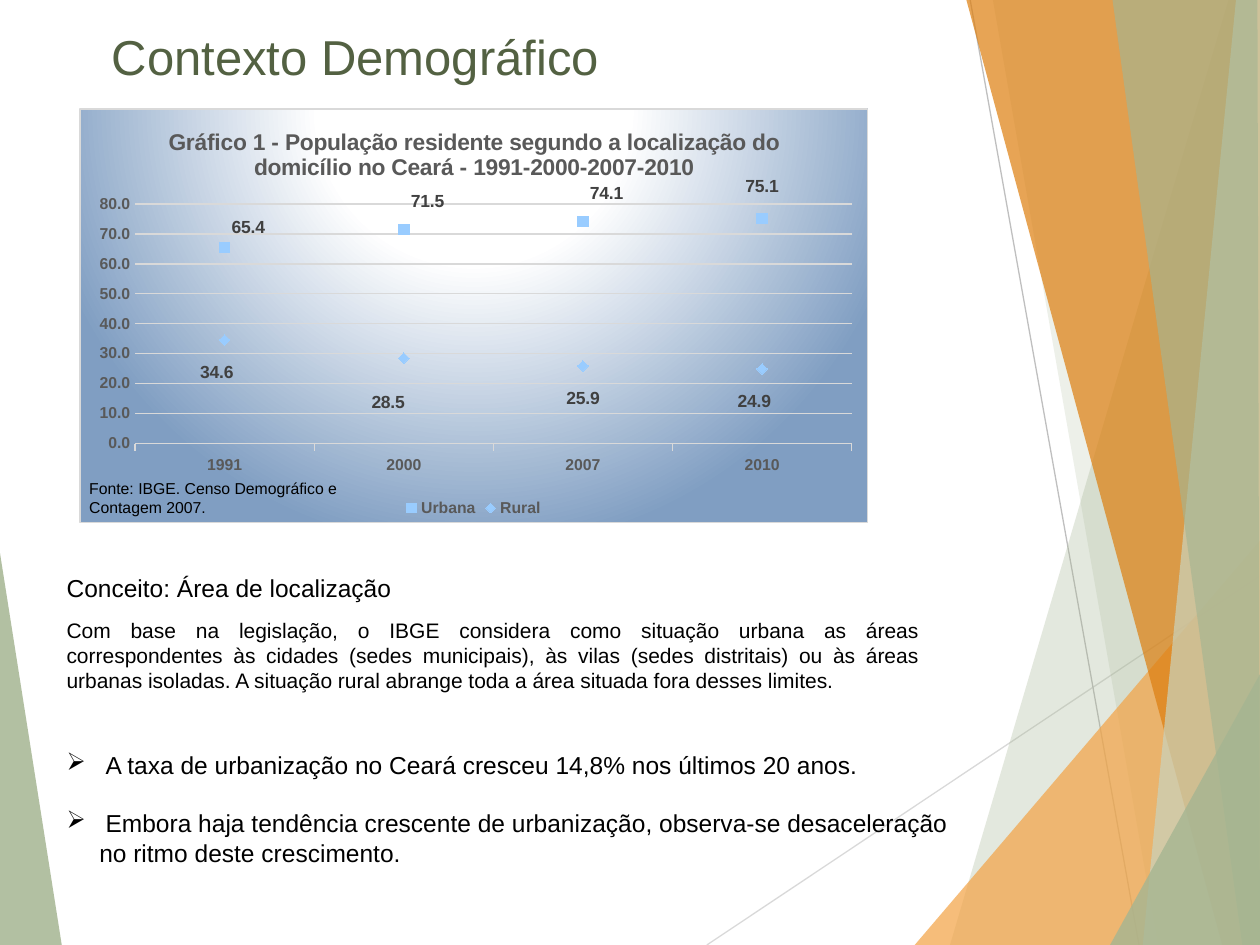
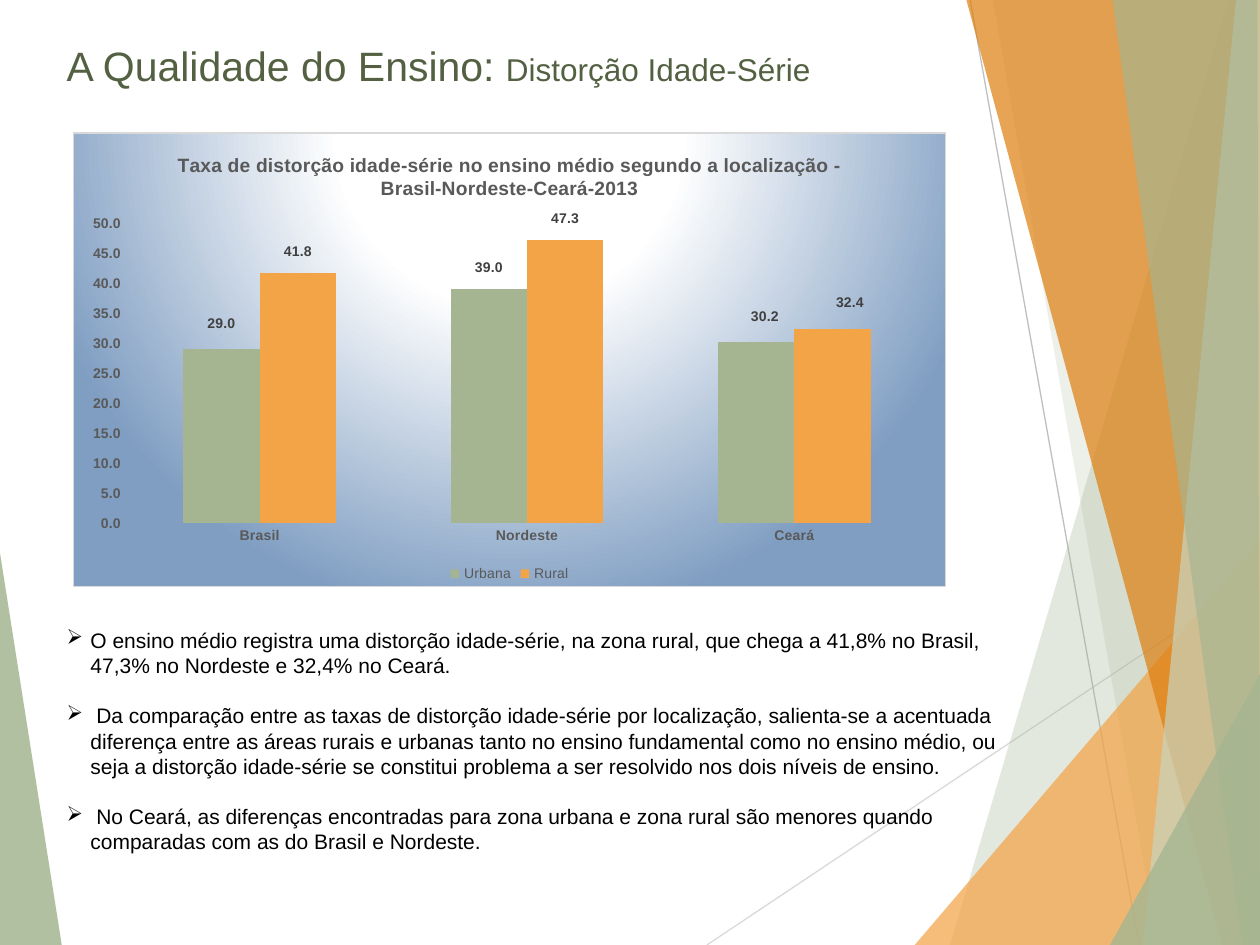
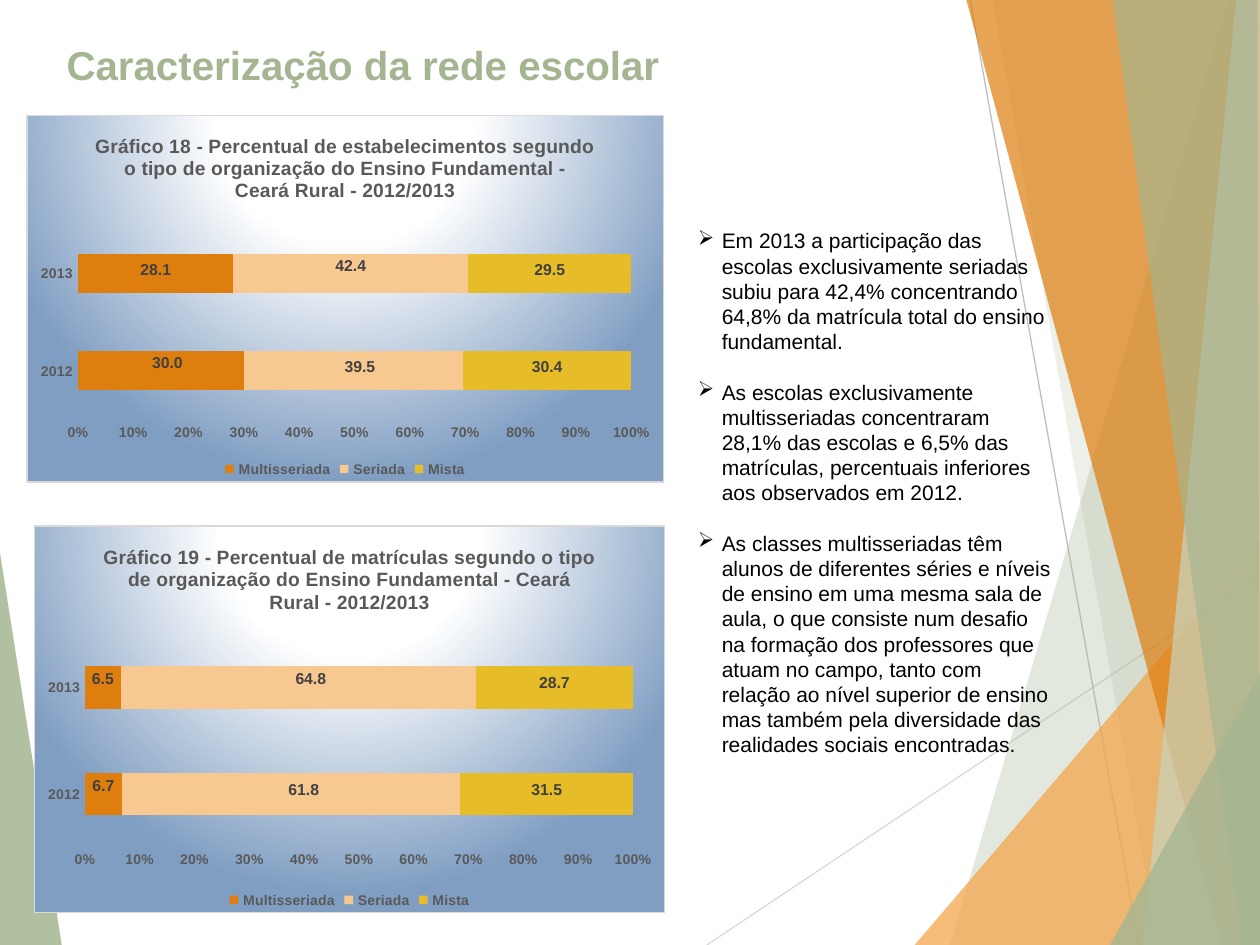
from lxml import etree
from pptx import Presentation
from pptx.chart.data import CategoryChartData
from pptx.dml.color import RGBColor
from pptx.enum.chart import (XL_CHART_TYPE, XL_LABEL_POSITION, XL_LEGEND_POSITION,
                             XL_MARKER_STYLE, XL_TICK_MARK)
from pptx.enum.shapes import MSO_CONNECTOR
from pptx.enum.text import MSO_ANCHOR, PP_ALIGN
from pptx.oxml import parse_xml
from pptx.oxml.ns import nsdecls, qn
from pptx.util import Inches, Pt

LINE = XL_CHART_TYPE.LINE_MARKERS
COLUMNS = XL_CHART_TYPE.COLUMN_CLUSTERED
STACKED_BARS = XL_CHART_TYPE.BAR_STACKED_100
ABOVE, BELOW = XL_LABEL_POSITION.ABOVE, XL_LABEL_POSITION.BELOW
OUTSIDE, CENTER = XL_LABEL_POSITION.OUTSIDE_END, XL_LABEL_POSITION.CENTER
SQUARE, DIAMOND = XL_MARKER_STYLE.SQUARE, XL_MARKER_STYLE.DIAMOND
LEGEND_BOTTOM = XL_LEGEND_POSITION.BOTTOM
TICK_NONE, TICK_OUT = XL_TICK_MARK.NONE, XL_TICK_MARK.OUTSIDE
STRAIGHT = MSO_CONNECTOR.STRAIGHT
TOP, MIDDLE = MSO_ANCHOR.TOP, MSO_ANCHOR.MIDDLE
LEFT, JUSTIFY = PP_ALIGN.LEFT, PP_ALIGN.JUSTIFY

FONT = "Arial"
BLACK, GRAY, DARK_GRAY, PALE_GRAY = "000000", "595959", "404040", "D9D9D9"
SAGE, OLIVE, ORANGE, DEEP_ORANGE = "A5B592", "536142", "F3A447", "DD7E0E"
PEACH, GOLD, SKY = "F8C891", "E7BC29", "99CCFF"

RAYS = [((5.61, 7.5), (10, 4.57), PALE_GRAY), ((7.7, 0), (9.04, 7.5), "BFBFBF")]
LEFT_FACET = ([(0, 4.39), (0.49, 7.5), (0, 7.5)], SAGE, 85)
RIGHT_FACETS = [
    ([(9.75, 0), (7.54, 7.5), (10, 7.5), (10, 0)], SAGE, 30),
    ([(7.88, 0), (9.19, 7.5), (10, 7.5), (10, 0)], SAGE, 20),
    ([(7.26, 7.5), (10, 4.29), (10, 7.5)], ORANGE, 72),
    ([(7.67, 0), (9.7, 7.5), (10, 7.5), (10, 0)], DEEP_ORANGE, 70),
    ([(9.81, 0), (9.07, 7.5), (10, 7.5), (10, 0)], "C9D3BE", 70),
    ([(8.83, 0), (9.86, 7.5), (10, 7.5), (9.98, 0)], SAGE, 65),
    ([(8.81, 7.5), (10, 5.35), (10, 7.5)], SAGE, 80),
]

CHART_AREA = f"""<c:spPr {nsdecls('c', 'a')}>
<a:gradFill><a:gsLst>
<a:gs pos="0"><a:srgbClr val="FFFFFF"/></a:gs>
<a:gs pos="35000"><a:srgbClr val="FFFFFF"/></a:gs>
<a:gs pos="100000"><a:srgbClr val="809EC2"/></a:gs>
</a:gsLst><a:path path="circle">
<a:fillToRect l="50000" t="-80000" r="50000" b="180000"/></a:path></a:gradFill>
<a:ln w="9525"><a:solidFill><a:srgbClr val="{PALE_GRAY}"/></a:solidFill></a:ln>
</c:spPr>"""


def rgb(hex_color):
    return RGBColor.from_string(hex_color)


def assign(target, values):
    for name, value in values.items():
        setattr(target, name, value)


def manual_layout(**values):
    entries = "".join(f'<c:{name} val="{value}"/>' for name, value in values.items())
    return parse_xml(f'<c:layout {nsdecls("c")}><c:manualLayout>{entries}'
                     '</c:manualLayout></c:layout>')


class Deck:
    def __init__(self):
        self.presentation = Presentation()
        assign(self.presentation, {"slide_width": Inches(10), "slide_height": Inches(7.5)})
        self.slide = None

    def new_slide(self):
        self.slide = self.presentation.slides.add_slide(self.presentation.slide_layouts[6])
        self.facet(*LEFT_FACET)
        for start, end, color in RAYS:
            self.ray(start, end, color)
        for outline, color, opacity in RIGHT_FACETS:
            self.facet(outline, color, opacity)

    def style(self, font, size, color, bold=False):
        assign(font, {"name": FONT, "size": Pt(size), "bold": bold})
        font.color.rgb = rgb(color)

    def facet(self, outline, color, opacity):
        points = [(Inches(x), Inches(y)) for x, y in outline]
        builder = self.slide.shapes.build_freeform(*points[0])
        builder.add_line_segments(points[1:], close=True)
        facet = builder.convert_to_shape()
        facet.shadow.inherit = False
        facet.fill.solid()
        facet.fill.fore_color.rgb = rgb(color)
        facet.line.fill.background()
        tint = next(facet._element.spPr.iter(qn("a:srgbClr")))
        etree.SubElement(tint, qn("a:alpha")).set("val", str(opacity * 1000))

    def ray(self, start, end, color):
        ray = self.slide.shapes.add_connector(STRAIGHT, *map(Inches, start + end))
        ray.line.color.rgb = rgb(color)
        ray.line.width = Pt(0.75)
        etree.SubElement(ray._element.spPr, qn("a:effectLst"))

    def frame(self, place, anchor=TOP):
        frame = self.slide.shapes.add_textbox(*map(Inches, place)).text_frame
        assign(frame, {"word_wrap": True, "vertical_anchor": anchor})
        return frame

    def title(self, place, runs, color=OLIVE, bold=False):
        heading = self.frame(place, MIDDLE).paragraphs[0]
        for text, size in runs:
            run = heading.add_run()
            run.text = text
            self.style(run.font, size, color, bold)

    def paragraph(self, paragraph, text, size, align=LEFT):
        assign(paragraph, {"line_spacing": Pt(size * 1.2), "alignment": align})
        run = paragraph.add_run()
        run.text = text
        self.style(run.font, size, BLACK)

    def text(self, place, text, size, align=LEFT):
        self.paragraph(self.frame(place).paragraphs[0], text, size, align)

    def bullets(self, place, items, size, indent):
        frame = self.frame(place)
        for index, item in enumerate(items):
            paragraph = frame.add_paragraph() if index else frame.paragraphs[0]
            self.paragraph(paragraph, item, size)
            if index:
                paragraph.space_before = Pt(size * 1.2)
            properties = paragraph._p.get_or_add_pPr()
            properties.set("marL", str(Inches(indent)))
            properties.set("indent", str(-Inches(indent)))
            etree.SubElement(properties, qn("a:buChar")).set("char", "➢")
        return frame

    def continuation(self, frame, text, size, indent):
        paragraph = frame.add_paragraph()
        self.paragraph(paragraph, text, size)
        paragraph._p.get_or_add_pPr().set("marL", str(Inches(indent)))

    def chart(self, kind, place, title, categories, series, plot_box, title_size=11,
              axis_size=8, label_size=9, legend_bold=True, axis_format="0.0", maximum=None):
        data = CategoryChartData(number_format="0.0")
        data.categories = categories
        for name, values, *_ in series:
            data.add_series(name, values)
        chart = self.slide.shapes.add_chart(kind, *map(Inches, place), data).chart
        self.style(chart.font, 10, BLACK)
        chart.element.find(qn("c:chart")).addnext(parse_xml(CHART_AREA))

        chart.has_title = True
        chart.chart_title.include_in_layout = False
        heading = chart.chart_title.text_frame.paragraphs[0].add_run()
        heading.text = title
        self.style(heading.font, title_size, GRAY, True)

        chart.has_legend = True
        assign(chart.legend, {"position": LEGEND_BOTTOM, "include_in_layout": False})
        self.style(chart.legend.font, axis_size, GRAY, legend_bold)

        for axis in (chart.category_axis, chart.value_axis):
            assign(axis, {"major_tick_mark": TICK_NONE, "minor_tick_mark": TICK_NONE,
                          "has_major_gridlines": False})
            self.style(axis.tick_labels.font, axis_size, GRAY, True)
            axis.format.line.fill.background()
        assign(chart.value_axis.tick_labels,
               {"number_format": axis_format, "number_format_is_linked": False})
        if maximum:
            assign(chart.value_axis, {"minimum_scale": 0, "maximum_scale": maximum})

        plot = chart.plots[0]
        plot.vary_by_categories = False
        if kind != LINE:
            assign(plot, {"gap_width": 150, "overlap": 100 if kind == STACKED_BARS else 0})
        x, y, width, height = plot_box
        area = chart.element.find(".//" + qn("c:plotArea"))
        for automatic in area.findall(qn("c:layout")):
            area.remove(automatic)
        area.insert(0, manual_layout(layoutTarget="inner", xMode="edge", yMode="edge",
                                     x=x, y=y, w=width, h=height))
        for drawn, (_, _, color, position, offsets) in zip(plot.series, series):
            if kind != LINE:
                drawn.format.fill.solid()
                drawn.format.fill.fore_color.rgb = rgb(color)
            self.labels(drawn, position, offsets, label_size)
        return chart

    def labels(self, series, position, offsets, size):
        for index in range(len(offsets)):
            label = series.points[index].data_label
            self.style(label.font, size, DARK_GRAY, True)
            label.position = position
        entries = series._element.iter(qn("c:dLbl"))
        for entry, (x, y) in zip(entries, offsets):
            entry.find(qn("c:idx")).addnext(manual_layout(x=x, y=y))
        for leader in series._element.iter(qn("c:showLeaderLines")):
            leader.set("val", "0")

    def markers_only(self, chart, styles, color):
        axis = chart.category_axis
        axis.major_tick_mark = TICK_OUT
        chart.value_axis.has_major_gridlines = True
        for line in (axis.format.line, chart.value_axis.major_gridlines.format.line):
            line.color.rgb = rgb(PALE_GRAY)
            line.width = Pt(0.75)
        for series, style in zip(chart.plots[0].series, styles):
            series.smooth = False
            series.format.line.fill.background()
            assign(series.marker, {"style": style, "size": 6})
            series.marker.format.fill.solid()
            series.marker.format.fill.fore_color.rgb = rgb(color)
            series.marker.format.line.fill.background()


def demographic_slide(deck):
    deck.new_slide()
    deck.title((0.79, 0.17, 6, 0.54), [("Contexto Demográfico", 28)])
    population = deck.chart(
        LINE, (0.63, 0.86, 6.26, 3.29),
        "Gráfico 1 - População residente segundo a localização do domicílio no Ceará"
        " - 1991-2000-2007-2010",
        ["1991", "2000", "2007", "2010"],
        [("Urbana", (65.4, 71.5, 74.1, 75.1), SKY, ABOVE,
          [(0.03, 0), (0.03, -0.02), (0.03, -0.02), (0, -0.03)]),
         ("Rural", (34.6, 28.5, 25.9, 24.9), SKY, BELOW,
          [(-0.01, 0.03), (-0.02, 0.06), (0, 0.03), (-0.01, 0.03)])],
        (0.07, 0.23, 0.91, 0.58), title_size=13, axis_size=9, label_size=10, maximum=80)
    deck.markers_only(population, (SQUARE, DIAMOND), SKY)
    deck.text((0.43, 4.5, 3.08, 0.34), "Conceito: Área de localização", 14)
    findings = deck.bullets((0.43, 5.9, 7.2, 1.04), [
        "A taxa de urbanização no Ceará cresceu 14,8% nos últimos 20 anos.",
        "Embora haja tendência crescente de urbanização, observa-se desaceleração",
    ], 14, 0.31)
    deck.continuation(findings, "no ritmo deste crescimento.", 14, 0.26)
    deck.text((0.43, 4.85, 6.97, 0.71),
              "Com base na legislação, o IBGE considera como situação urbana as áreas "
              "correspondentes às cidades (sedes municipais), às vilas (sedes distritais) "
              "ou às áreas urbanas isoladas. A situação rural abrange toda a área situada "
              "fora desses limites.", 12, JUSTIFY)
    deck.text((0.61, 3.75, 2.29, 0.4), "Fonte: IBGE. Censo Demográfico e Contagem 2007.", 9)


def quality_slide(deck):
    deck.new_slide()
    deck.title((0.43, 0.25, 7.23, 0.53),
               [("A Qualidade do Ensino: ", 23.4), ("Distorção Idade-Série", 18)])
    deck.bullets((0.43, 4.93, 7.74, 1.92), [
        "O ensino médio registra uma distorção idade-série, na zona rural, que chega a "
        "41,8% no Brasil, 47,3% no Nordeste e 32,4% no Ceará.",
        " Da comparação entre as taxas de distorção idade-série por localização, "
        "salienta-se a acentuada diferença entre as áreas rurais e urbanas tanto no ensino "
        "fundamental como no ensino médio, ou seja a distorção idade-série se constitui "
        "problema a ser resolvido nos dois níveis de ensino.",
        " No Ceará, as diferenças encontradas para zona urbana e zona rural são menores "
        "quando comparadas com as do Brasil e Nordeste.",
    ], 12, 0.19)
    deck.chart(
        COLUMNS, (0.58, 1.05, 6.93, 3.61),
        "Taxa de distorção idade-série no ensino médio segundo a localização - "
        "Brasil-Nordeste-Ceará-2013",
        ["Brasil", "Nordeste", "Ceará"],
        [("Urbana", (29, 39, 30.2), SAGE, OUTSIDE, [(0, -0.03), (0, -0.02), (0.01, -0.03)]),
         ("Rural", (41.8, 47.3, 32.4), ORANGE, OUTSIDE,
          [(0, -0.02), (0, -0.02), (0.02, -0.03)])],
        (0.06, 0.2, 0.92, 0.66), label_size=8, legend_bold=False, maximum=50)


def school_network_slide(deck):
    deck.new_slide()
    deck.title((0.43, 0.25, 7.23, 0.53), [("Caracterização da rede escolar", 23)], SAGE, True)
    organization = "segundo o tipo de organização do Ensino Fundamental - Ceará Rural - 2012/2013"
    kinds = [("Multisseriada", DEEP_ORANGE), ("Seriada", PEACH), ("Mista", GOLD)]
    charts = [
        ((0.21, 0.91, 5.06, 2.92), "Gráfico 18 - Percentual de estabelecimentos",
         (0.08, 0.3, 0.87, 0.53),
         [(30.0, 28.1), (39.5, 42.4), (30.4, 29.5)],
         [[(0.01, -0.02), (0, -0.01)], [(0.01, -0.01), (0, -0.02)], [(0, -0.01), (0, -0.01)]]),
        ((0.27, 4.17, 5.01, 3.08), "Gráfico 19 - Percentual de matrículas",
         (0.08, 0.28, 0.87, 0.55),
         [(6.7, 6.5), (61.8, 64.8), (31.5, 28.7)],
         [[(0, -0.02), (0, -0.02)], [(0.02, -0.01), (0.02, -0.02)], [(0, -0.01), (0, -0.01)]]),
    ]
    for place, subject, plot_box, shares, offsets in charts:
        series = [(name, values, color, CENTER, shifts)
                  for (name, color), values, shifts in zip(kinds, shares, offsets)]
        deck.chart(STACKED_BARS, place, f"{subject} {organization}", ["2012", "2013"],
                   series, plot_box, axis_format="0%")
    deck.bullets((5.44, 1.76, 3.03, 4.34), [
        "Em 2013 a participação das escolas exclusivamente seriadas subiu para 42,4% "
        "concentrando 64,8% da matrícula total do ensino fundamental.",
        "As escolas exclusivamente multisseriadas concentraram 28,1% das escolas e 6,5% "
        "das matrículas, percentuais inferiores aos observados em 2012.",
        "As classes multisseriadas têm alunos de diferentes séries e níveis de ensino em "
        "uma mesma sala de aula, o que consiste num desafio na formação dos professores "
        "que atuam no campo, tanto com relação ao nível superior de ensino mas também pela "
        "diversidade das realidades sociais encontradas.",
    ], 12, 0.19)


def main():
    deck = Deck()
    demographic_slide(deck)
    quality_slide(deck)
    school_network_slide(deck)
    deck.presentation.save("out.pptx")


if __name__ == "__main__":
    main()
